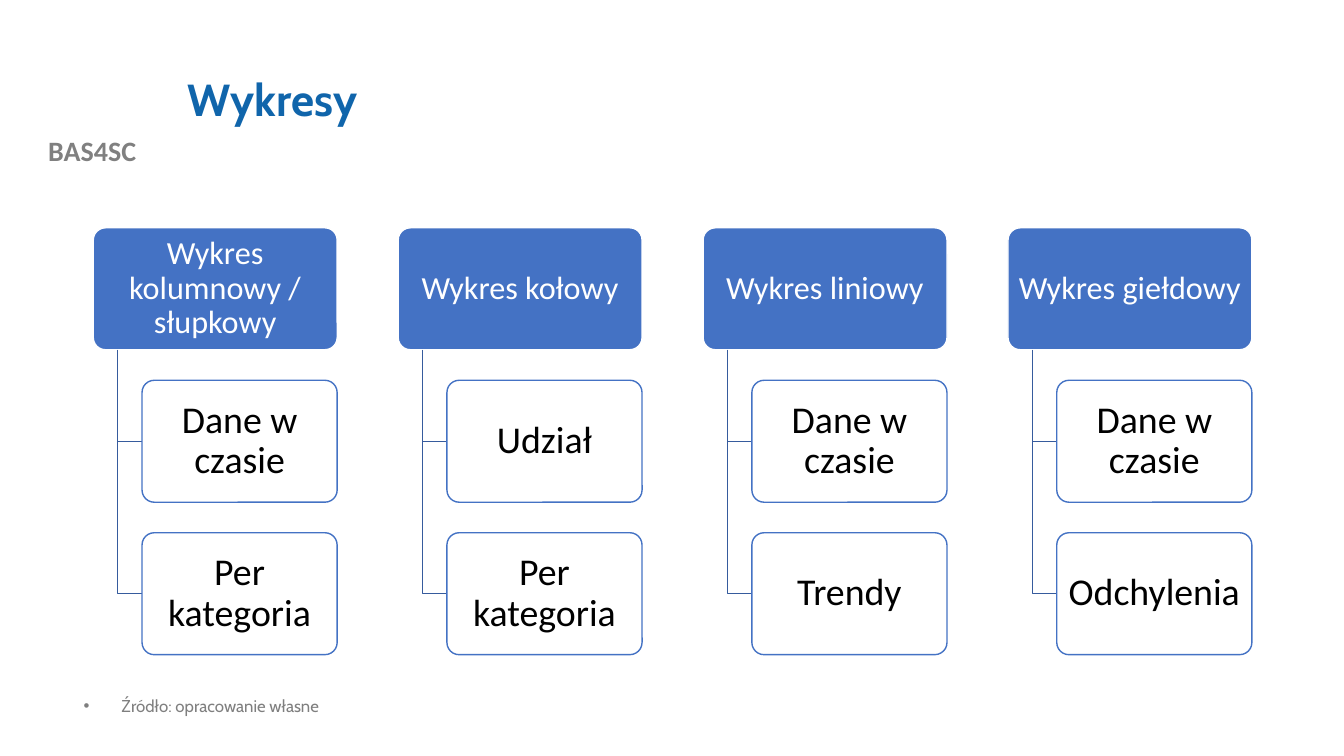
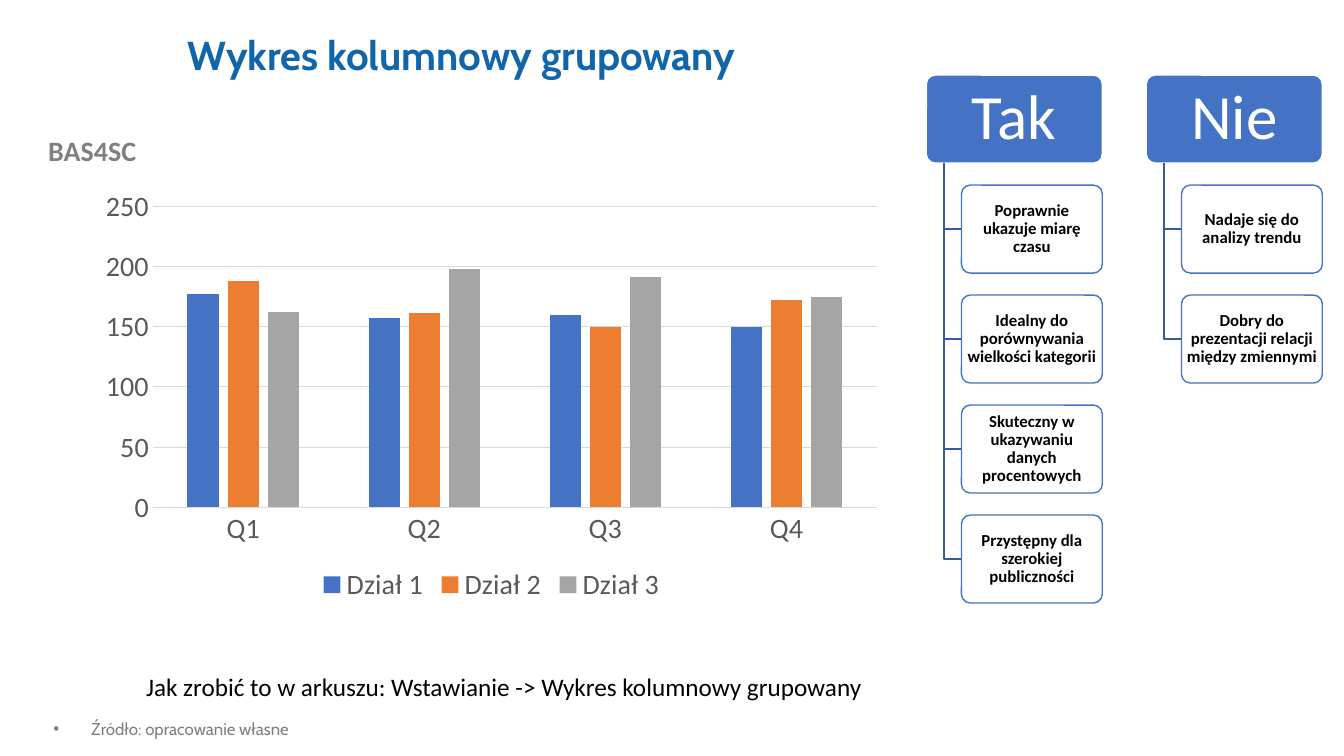
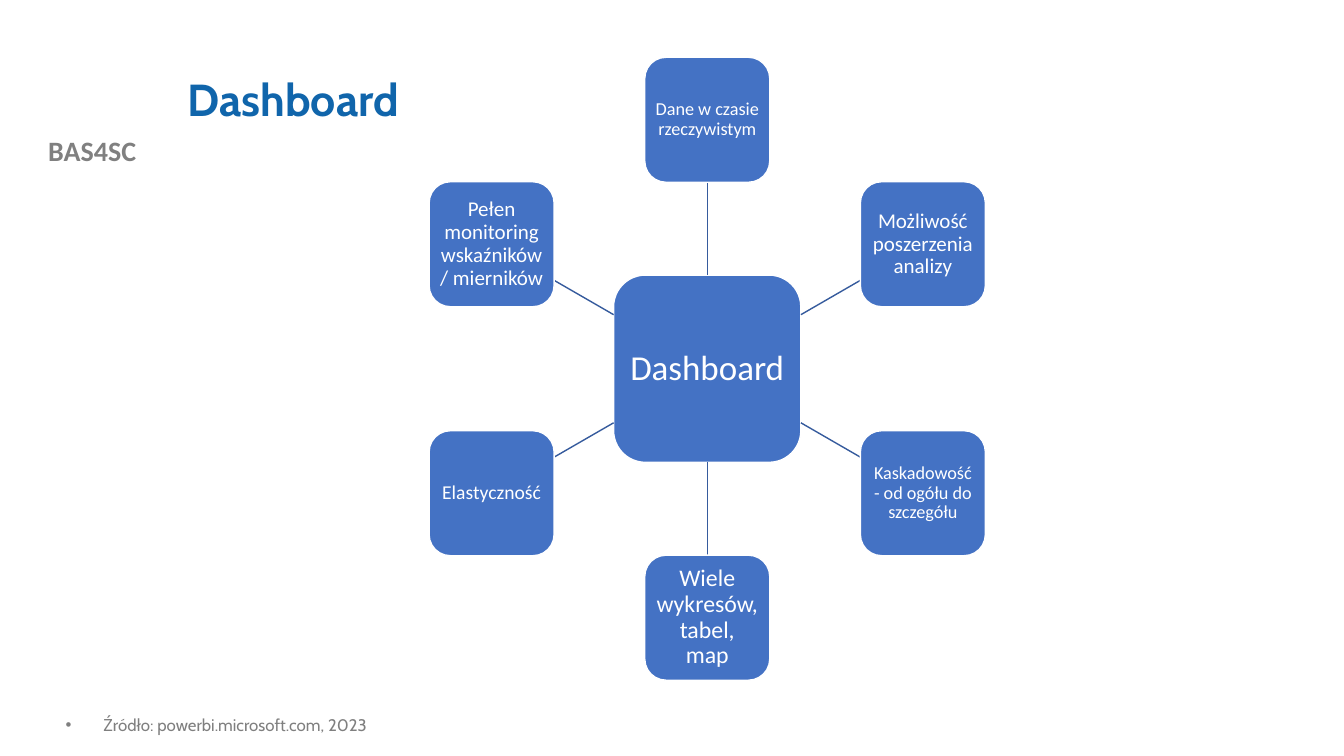
from dataclasses import dataclass
from math import cos, radians, sin

from lxml import etree
from pptx import Presentation
from pptx import util as u
from pptx.chart import data as cd
from pptx.dml import color as col
from pptx.enum import chart as ch
from pptx.enum import shapes as sh
from pptx.enum import text as tx
from pptx.oxml import ns

COLS, ROWS = 160, 90
CELL = u.Inches(7.5) / ROWS
BLUE, NAVY, WHITE, BLACK = "4472C4", "365B9D", "FFFFFF", "000000"
TITLE, TAG, NOTE, AXIS, GRID = "1065AB", "808080", "7F7F7F", "595959", "D9D9D9"
HEAD, BODY = "Cabin", "Calibri"
MID, TOP = tx.MSO_ANCHOR.MIDDLE, tx.MSO_ANCHOR.TOP
LEFT, CENTER = tx.PP_ALIGN.LEFT, tx.PP_ALIGN.CENTER


@dataclass
class Box:
    x: float
    y: float
    w: float
    h: float

    def emu(self) -> list[int]:
        return [cell(v) for v in (self.x, self.y, self.w, self.h)]


@dataclass
class Style:
    size: float
    color: str = BLACK
    bold: bool = False
    face: str = BODY
    align: tx.PP_ALIGN = CENTER
    pitch: float = 0.9


@dataclass
class Tree:
    x: float
    y: float
    w: float
    head: Style
    leaf: Style


@dataclass
class Branch:
    name: str
    leaves: list[str]


@dataclass
class Node:
    text: str
    size: float


def cell(n: float) -> int:
    return round(n * CELL)


def rgb(code: str) -> col.RGBColor:
    return col.RGBColor.from_string(code)


def paint(font, style: Style) -> None:
    font.name, font.size, font.bold = style.face, u.Pt(style.size), style.bold
    font.color.rgb = rgb(style.color)


def stroke(line, code: str, width: float = 1) -> None:
    line.color.rgb = rgb(code)
    line.width = u.Pt(width)


def write(shape, words: str, style: Style, anchor=TOP) -> None:
    frame = shape.text_frame
    frame.text = words
    frame.word_wrap = True
    frame.auto_size = tx.MSO_AUTO_SIZE.NONE
    frame.vertical_anchor = anchor
    para = frame.paragraphs[0]
    para.alignment = style.align
    para.line_spacing = style.pitch
    paint(para.font, style)


def place(shape, box: Box) -> None:
    shape.left, shape.top, shape.width, shape.height = box.emu()


def label(slide, box: Box, words: str, style: Style) -> None:
    write(slide.shapes.add_textbox(*box.emu()), words, style)


def card(slide, box: Box, words: str, style: Style, fill: str, edge: str,
         pad: tuple[float, float], curve: float) -> None:
    shape = slide.shapes.add_shape(sh.MSO_SHAPE.ROUNDED_RECTANGLE, *box.emu())
    shape.adjustments[0] = curve
    shape.shadow.inherit = False
    shape.fill.solid()
    shape.fill.fore_color.rgb = rgb(fill)
    stroke(shape.line, edge)
    write(shape, words, style, MID)
    frame = shape.text_frame
    frame.margin_left = frame.margin_right = u.Pt(style.size * pad[0])
    frame.margin_top = frame.margin_bottom = u.Pt(style.size * pad[1])


def elbow(slide, x: float, y: float, right: float, low: float) -> None:
    pen = slide.shapes.build_freeform(cell(x), cell(y))
    points = [(cell(x), cell(low)), (cell(right), cell(low))]
    pen.add_line_segments(points, close=False)
    shape = pen.convert_to_shape()
    shape.shadow.inherit = False
    shape.fill.background()
    stroke(shape.line, NAVY)


def spoke(slide, x: float, y: float, to_x: float, to_y: float) -> None:
    ends = [cell(v) for v in (x, y, to_x, to_y)]
    link = slide.shapes.add_connector(sh.MSO_CONNECTOR.STRAIGHT, *ends)
    stroke(link.line, NAVY)
    etree.SubElement(link._element.spPr, ns.qn("a:effectLst"))


def grow(slide, tree: Tree, parts: list[Branch]) -> None:
    high, pad, curve = tree.w / 2, (0.15, 0.1), 0.1
    for i, part in enumerate(parts):
        x = tree.x + i * 1.25 * tree.w
        card(slide, Box(x, tree.y, tree.w, high), part.name, tree.head,
             BLUE, WHITE, pad, curve)
        for j, leaf in enumerate(part.leaves, 1):
            y = tree.y + j * 1.25 * high
            start = x + 0.2 * tree.w
            elbow(slide, x + 0.1 * tree.w, tree.y + high, start, y + high / 2)
            card(slide, Box(start, y, 0.8 * tree.w, high), leaf, tree.leaf,
                 WHITE, BLUE, pad, curve)


def square(slide, x: float, y: float, side: float, node: Node) -> None:
    card(slide, Box(x - side / 2, y - side / 2, side, side), node.text,
         Style(node.size, WHITE), BLUE, WHITE, (0.2, 0.2), 0.17)


def wheel(slide, hub: Node, nodes: list[Node]) -> None:
    x, y, ring, big, small = 84.2, 43.9, 29.64, 22.3, 14.88
    square(slide, x, y, big, hub)
    for i, node in enumerate(nodes):
        angle = radians(i * 360 / len(nodes))
        dx, dy = sin(angle), -cos(angle)
        reach = max(abs(dx), abs(dy))
        near, far = big / 2 / reach, ring - small / 2 / reach
        spoke(slide, x + near * dx, y + near * dy, x + far * dx, y + far * dy)
        square(slide, x + ring * dx, y + ring * dy, small, node)


def bars(slide, box: Box, cats: list[str], rows: dict[str, tuple[str, list[int]]]) -> None:
    data = cd.CategoryChartData()
    data.categories = cats
    for name, (_, vals) in rows.items():
        data.add_series(name, vals)
    kind = ch.XL_CHART_TYPE.COLUMN_CLUSTERED
    chart = slide.shapes.add_chart(kind, *box.emu(), data).chart
    paint(chart.font, Style(20, AXIS))
    chart.has_title = False
    chart.has_legend = True
    chart.legend.position = ch.XL_LEGEND_POSITION.BOTTOM
    chart.legend.include_in_layout = False
    plot = chart.plots[0]
    plot.gap_width, plot.overlap, plot.vary_by_categories = 219, -27, False
    for line, (code, _) in zip(plot.series, rows.values()):
        line.format.fill.solid()
        line.format.fill.fore_color.rgb = rgb(code)
    for axis in (chart.category_axis, chart.value_axis):
        axis.major_tick_mark = axis.minor_tick_mark = ch.XL_TICK_MARK.NONE
        paint(axis.tick_labels.font, Style(20, AXIS))
    stroke(chart.category_axis.format.line, GRID, 0.75)
    scale = chart.value_axis
    scale.minimum_scale, scale.maximum_scale, scale.major_unit = 0, 250, 50
    scale.format.line.fill.background()
    stroke(scale.major_gridlines.format.line, GRID, 0.75)


def start(deck, title: str, note: str, spot: Box, size: float = 32, lift: bool = False):
    slide = deck.slides.add_slide(deck.slide_layouts[1])
    label(slide, Box(0, 15.36, 21.96, 5.28), "BAS4SC", Style(20, TAG, True, pitch=1))
    head, body = slide.placeholders
    place(head, Box(21.12, 4.2 if lift else 4.8, 127.92, 14.64))
    write(head, title, Style(size, TITLE, True, HEAD, LEFT), TOP if lift else MID)
    if lift:
        head.text_frame.margin_top = 0
    place(body, spot)
    props = body.text_frame.paragraphs[0]._p.get_or_add_pPr()
    props.set("marL", "0")
    props.set("indent", "0")
    etree.SubElement(props, ns.qn("a:buNone"))
    write(body, note, Style(12, NOTE, False, HEAD, LEFT))
    body.text_frame.paragraphs[0].space_before = u.Pt(0)
    return slide


def kinds(deck) -> None:
    slide = start(deck, "Wykresy", "Źródło: opracowanie własne",
                  Box(8.76, 82.44, 60.12, 6.24))
    tree = Tree(11.1, 27.12, 29.04, Style(23, WHITE), Style(27))
    grow(slide, tree, [
        Branch("Wykres kolumnowy / słupkowy", ["Dane w czasie", "Per kategoria"]),
        Branch("Wykres kołowy", ["Udział", "Per kategoria"]),
        Branch("Wykres liniowy", ["Dane w czasie", "Trendy"]),
        Branch("Wykres giełdowy", ["Dane w czasie", "Odchylenia"]),
    ])


def column(deck) -> None:
    slide = start(deck, "Wykres kolumnowy grupowany", "Źródło: opracowanie własne",
                  Box(5.16, 85.2, 60.12, 3.84), 28.8, True)
    tree = Tree(110.28, 8.94, 20.95, Style(45, WHITE), Style(12, bold=True))
    grow(slide, tree, [
        Branch("Tak", ["Poprawnie ukazuje miarę czasu",
                       "Idealny do porównywania wielkości kategorii",
                       "Skuteczny w ukazywaniu danych procentowych",
                       "Przystępny dla szerokiej publiczności"]),
        Branch("Nie", ["Nadaje się do analizy trendu",
                       "Dobry do prezentacji relacji między zmiennymi"]),
    ])
    label(slide, Box(16.2, 79.32, 94.56, 5.04),
          "Jak zrobić to w arkuszu: Wstawianie -> Wykres kolumnowy grupowany",
          Style(18, align=LEFT, pitch=1))
    bars(slide, Box(10.68, 21.48, 95.64, 50.88), ["Q1", "Q2", "Q3", "Q4"], {
        "Dział 1": (BLUE, [177, 157, 160, 150]),
        "Dział 2": ("ED7D31", [188, 161, 150, 172]),
        "Dział 3": ("A5A5A5", [162, 198, 191, 175]),
    })


def board(deck) -> None:
    slide = start(deck, "Dashboard", "Źródło: powerbi.microsoft.com, 2023",
                  Box(6.6, 84.72, 63.24, 4.08))
    wheel(slide, Node("Dashboard", 25), [
        Node("Dane w czasie rzeczywistym", 13),
        Node("Możliwość poszerzenia analizy", 15),
        Node("Kaskadowość - od ogółu do szczegółu", 13),
        Node("Wiele wykresów, tabel, map", 17),
        Node("Elastyczność", 14),
        Node("Pełen monitoring wskaźników / mierników", 15),
    ])


def main() -> None:
    deck = Presentation()
    deck.slide_width, deck.slide_height = cell(COLS), cell(ROWS)
    for draw in (kinds, column, board):
        draw(deck)
    deck.save("out.pptx")


if __name__ == "__main__":
    main()
